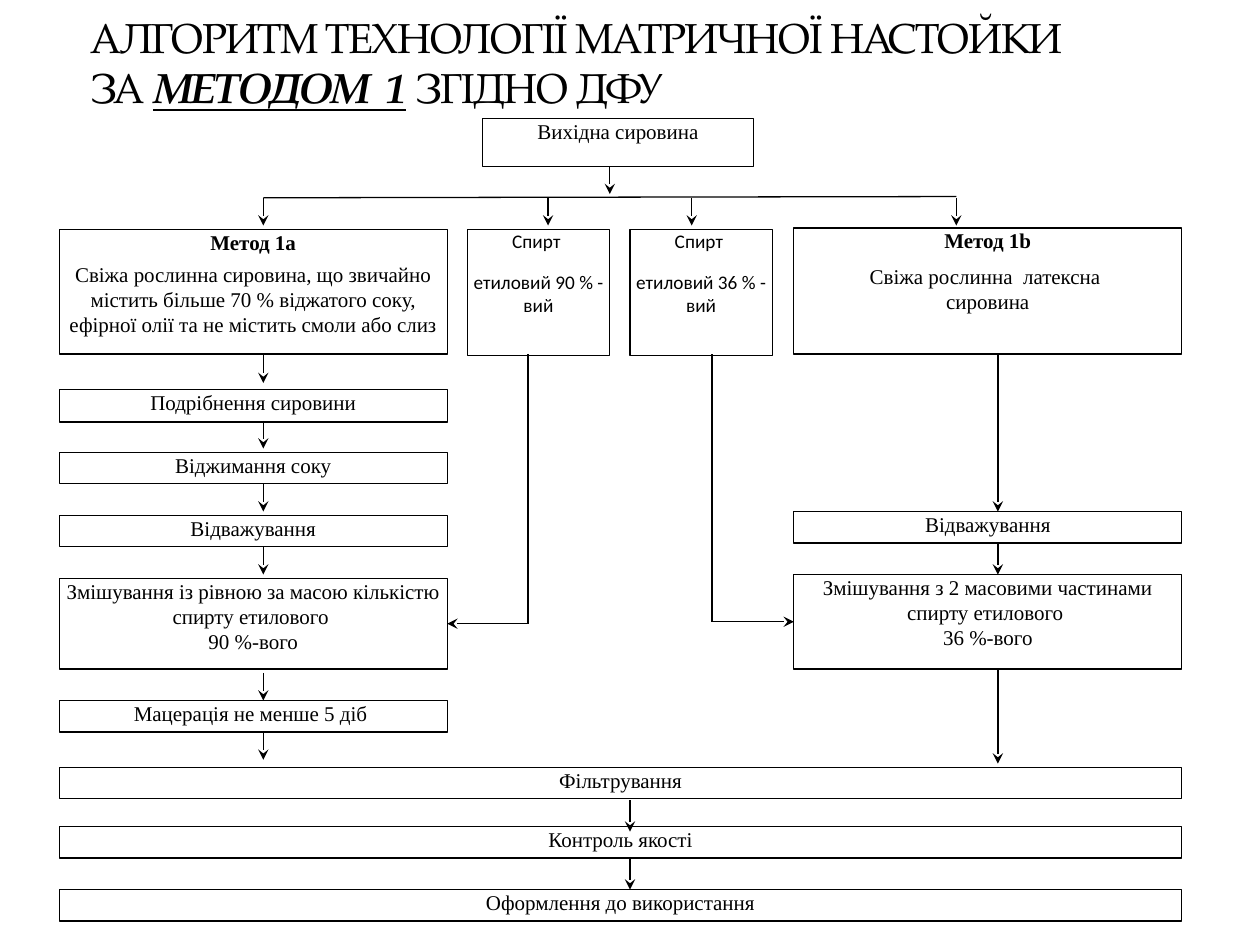
from dataclasses import dataclass
from typing import Optional

from lxml.etree import SubElement
from pptx import Presentation
from pptx.dml.color import RGBColor
from pptx.enum.shapes import MSO_CONNECTOR as Link, MSO_SHAPE as Form
from pptx.enum.text import MSO_ANCHOR as Anchor, PP_ALIGN as Align
from pptx.oxml.ns import qn
from pptx.util import Inches, Pt

BLACK = RGBColor(0x00, 0x00, 0x00)
WHITE = RGBColor(0xFF, 0xFF, 0xFF)
COLS, ROWS = 100, 75
LEFT, RIGHT = 4.7, 63
SIDE, FULL, LOW = 30.8, 89.1, 2.5
DROP = 2.2
STEM, MID, TRUNK = 20.9, 50, 79.2


@dataclass(frozen=True)
class Style:
    """Font and paragraph gaps of a box."""
    font: str
    size: int
    before: int
    after: int


SERIF = Style("Times New Roman", 12, 3, 3)
TIGHT = Style("Times New Roman", 12, 1, 3)
SANS = Style("Calibri", 11, 0, 10)


@dataclass(frozen=True)
class Box:
    """A framed step placed in grid columns and rows."""
    x: float
    y: float
    w: float
    h: float
    text: str
    style: Style = SERIF
    head: str = ""


@dataclass(frozen=True)
class Line:
    """A straight line between two grid points."""
    x: float
    y: float
    u: float
    v: float
    tip: bool = True
    goal: Optional[str] = None
    site: int = 0


MIX_A, MIX_B = "Змішування із рівною", "Змішування з 2"
MIX_Y = 49.5
MIX_V = 49.35

BOXES = [
    Box(38.3, 9.4, 21.5, 3.8, "Вихідна сировина"),
    Box(RIGHT, 18.1, SIDE, 10, "Свіжа рослинна  латексна \vсировина", head="Метод 1b"),
    Box(LEFT, 18.2, SIDE, 9.9,
        "Свіжа рослинна сировина, що звичайно містить більше 70 % віджатого соку, "
        "ефірної олії та не містить смоли або слиз", TIGHT, "Метод 1а"),
    Box(LEFT, 30.9, SIDE, 2.6, "Подрібнення сировини", TIGHT),
    Box(LEFT, 35.9, SIDE, LOW, "Віджимання соку"),
    Box(LEFT, 40.9, SIDE, LOW, "Відважування"),
    Box(LEFT, 45.9, SIDE, 7.2, MIX_A + " за масою кількістю спирту етилового \v90 %-вого"),
    Box(LEFT, 55.6, SIDE, LOW, "Мацерація не менше 5 діб "),
    Box(RIGHT, 40.6, SIDE, LOW, "Відважування"),
    Box(RIGHT, 45.6, SIDE, 7.5, MIX_B + " масовими частинами спирту етилового \v36 %-вого"),
    Box(LEFT, 60.9, FULL, LOW, "Фільтрування"),
    Box(LEFT, 65.6, FULL, LOW, "Контроль якості"),
    Box(LEFT, 70.6, FULL, LOW, "Оформлення до використання"),
] + [
    Box(x, 18.2, 11.3, 10, f"етиловий {rate} % - вий", SANS, "Спирт ")
    for x, rate in ((37.1, 90), (50, 36))
]

FALLS = [(48.4, 13.2)]
FALLS += [(x, 15.7) for x in (STEM, 43.5, 54.9, 75.9)]
FALLS += [(STEM, y) for y in (28.2, 33.4, 38.4, 43.4, 53.4, 58.1)]

LINES = [Line(x, y, x, y + DROP) for x, y in FALLS] + [
    Line(STEM, 15.7, 75.9, 15.6, tip=False),
    Line(TRUNK, 28.1, TRUNK, 40.6),
    Line(TRUNK, 43.1, TRUNK, 45.6),
    Line(TRUNK, 53.1, TRUNK, 60.6),
    Line(MID, 63.5, MID, 66),
    Line(MID, 68.1, MID, 70.6),
    Line(41.9, 28.1, 41.9, MIX_Y, tip=False),
    Line(41.9, MIX_Y, LEFT + SIDE, MIX_Y, goal=MIX_A, site=3),
    Line(56.5, 28.1, 56.5, MIX_V, tip=False),
    Line(56.5, MIX_V, RIGHT, MIX_V, goal=MIX_B, site=1),
]


def grid(*spots: float) -> list[int]:
    """Turn grid cells into slide lengths."""
    return [round(spot * Inches(10) / COLS) for spot in spots]


def draw_box(slide, box: Box):
    """Draw a framed step with its text."""
    rect = slide.shapes.add_shape(Form.RECTANGLE, *grid(box.x, box.y, box.w, box.h))
    rect.shadow.inherit = False
    rect.fill.solid()
    rect.fill.fore_color.rgb = WHITE
    rect.line.color.rgb = BLACK
    rect.line.width = Pt(0.75)
    frame = rect.text_frame
    frame.word_wrap = True
    frame.vertical_anchor = Anchor.TOP
    frame.margin_left = frame.margin_right = 0
    frame.margin_top = frame.margin_bottom = 0
    frame.text = f"{box.head}\n{box.text}" if box.head else box.text
    style = box.style
    for rank, para in enumerate(frame.paragraphs):
        first = bool(box.head) and rank == 0
        para.alignment = Align.CENTER
        para.space_before = Pt(3 if first and style is TIGHT else style.before)
        para.space_after = Pt(style.after)
        for run in para.runs:
            run.font.name = style.font
            run.font.size = Pt(style.size)
            run.font.color.rgb = BLACK
            run.font.bold = first and style is not SANS
    return rect


def draw_line(slide, line: Line, rects: dict) -> None:
    """Draw a line, with an arrow tip and a joint where asked."""
    link = slide.shapes.add_connector(
        Link.STRAIGHT, *grid(line.x, line.y, line.u, line.v))
    link.line.color.rgb = BLACK
    link.line.width = Pt(0.75)
    if line.tip:
        SubElement(link.line._get_or_add_ln(), qn("a:tailEnd"), type="stealth")
    SubElement(link._element.spPr, qn("a:effectLst"))
    if line.goal:
        goal = next(rect for text, rect in rects.items() if text.startswith(line.goal))
        link.end_connect(goal, line.site)


def draw_title(slide) -> None:
    """Write the heading with its stressed words."""
    frame = slide.shapes.add_textbox(*grid(6.2, 0.8, 90, 8.6)).text_frame
    frame.word_wrap = True
    frame.vertical_anchor = Anchor.BOTTOM
    frame.text = "АЛГОРИТМ ТЕХНОЛОГІЇ МАТРИЧНОЇ НАСТОЙКИ\vЗА "
    para = frame.paragraphs[0]
    stress = para.add_run()
    stress.text = "МЕТОДОМ  1"
    para.add_run().text = " ЗГІДНО ДФУ"
    for run in para.runs:
        run.font.name = "TeX Gyre Pagella"
        run.font.size = Pt(24)
        run.font.color.rgb = BLACK
        run._r.get_or_add_rPr().set("spc", "-100")
    stress.font.bold = stress.font.italic = stress.font.underline = True


def main() -> None:
    """Build the flow chart slide."""
    deck = Presentation()
    deck.slide_width, deck.slide_height = grid(COLS, ROWS)
    slide = deck.slides.add_slide(deck.slide_layouts[6])
    draw_title(slide)
    rects = {box.text: draw_box(slide, box) for box in BOXES}
    for line in LINES:
        draw_line(slide, line, rects)
    deck.save("out.pptx")


if __name__ == "__main__":
    main()
